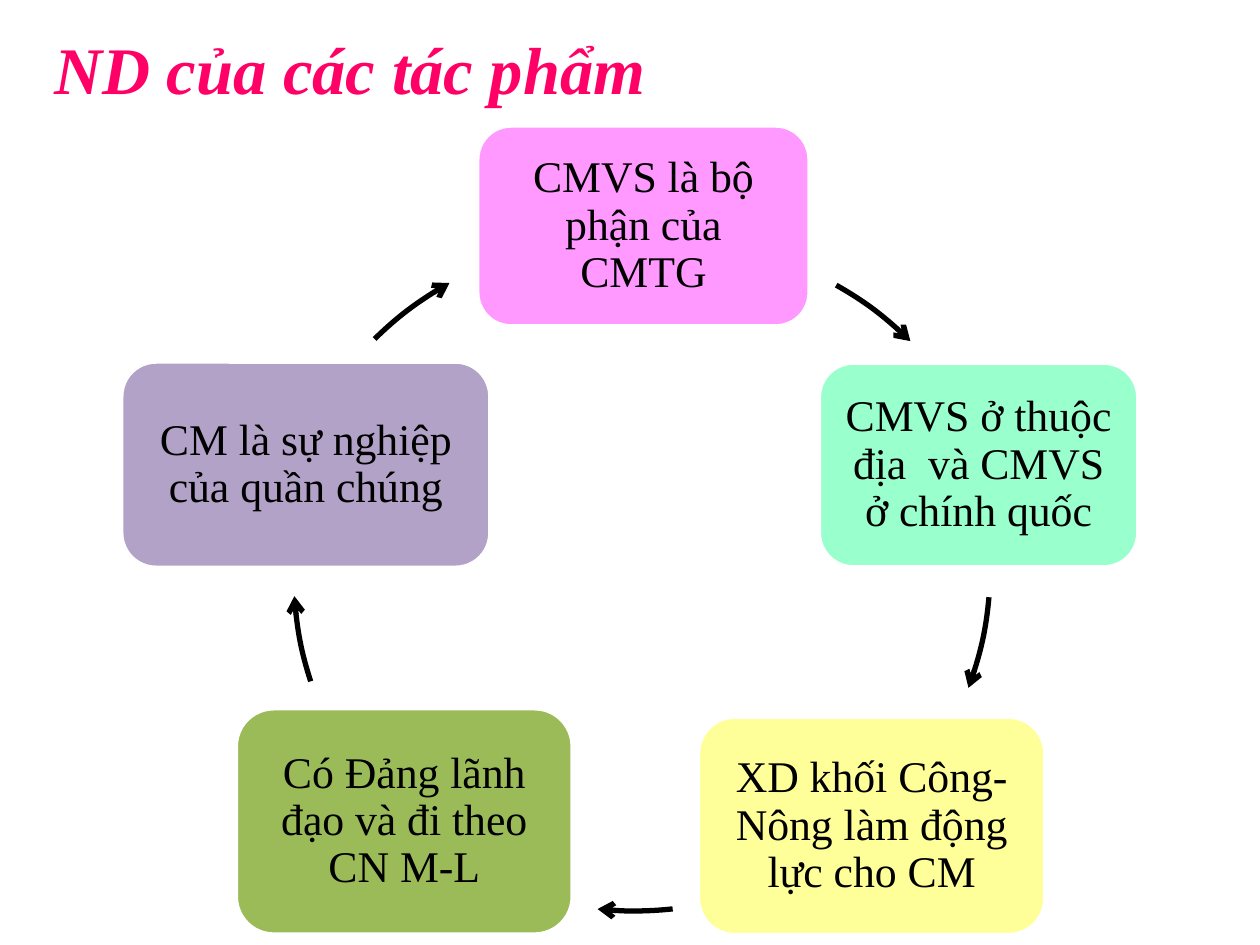
from typing import NamedTuple

from lxml import etree
from pptx import Presentation
from pptx.dml.color import RGBColor
from pptx.enum.shapes import MSO_SHAPE as Shape
from pptx.enum.text import MSO_ANCHOR as Anchor, PP_ALIGN as Align
from pptx.oxml import parse_xml
from pptx.oxml.ns import nsdecls, qn
from pptx.util import Pt

FONT = "Times New Roman"
BLACK = RGBColor(0x00, 0x00, 0x00)
WHITE = RGBColor(0xFF, 0xFF, 0xFF)
ROSE = RGBColor(0xFF, 0x00, 0x66)
PINK = RGBColor(0xFF, 0x99, 0xFF)
MINT = RGBColor(0x99, 0xFF, 0xCC)
YELLOW = RGBColor(0xFF, 0xFF, 0x99)
GREEN = RGBColor(0x9B, 0xBB, 0x59)
LILAC = RGBColor(0xB3, 0xA2, 0xC7)
RING = 404  # diameter of the circle the arrows follow


class Card(NamedTuple):
    text: str
    fill: RGBColor
    left: float
    top: float
    width: float
    height: float


class Arc(NamedTuple):
    left: float
    top: float
    start: float  # degrees, clockwise from east
    end: float


CARDS = [
    Card("CMVS là bộ phận của CMTG", PINK, 273, 72, 189.4, 114.3),
    Card("CMVS ở thuộc địa  và CMVS ở chính quốc", MINT, 468.2, 207.5, 182, 116.5),
    Card("XD khối Công-Nông làm động lực cho CM", YELLOW, 399.1, 409.8, 198, 124.3),
    Card("Có Đảng lãnh đạo và đi theo CN M-L", GREEN, 135, 405, 192, 128.8),
    Card("CM là sự nghiệp của quần chúng", LILAC, 69.6, 206.9, 210.4, 117.3),
]
ARCS = [
    Arc(176.4, 136.8, 299.5, 314.6),
    Arc(162, 121, 5.2, 20.3),
    Arc(160.6, 116.6, 83.8, 96),
    Arc(167.8, 125.3, 162.1, 176.2),
    Arc(153.4, 136.1, 225.6, 240.8),
]


def add_run(p, text: str, size: float, color: RGBColor):
    r = p.add_run()
    r.text = text
    r.font.size = Pt(size)
    r.font.color.rgb = color
    r.font.name = FONT
    return r


def add_title(s, text: str) -> None:
    tf = s.shapes.add_textbox(Pt(23.8), Pt(12.2), Pt(653.8), Pt(60)).text_frame
    tf.word_wrap = True
    p = tf.paragraphs[0]
    p.space_before = Pt(4)
    r = add_run(p, text, 38, ROSE)
    r.font.bold = r.font.italic = True
    # Soft text shadow, placed between the fill and the font
    shadow = parse_xml(
        f'<a:effectLst {nsdecls("a")}>'
        '<a:outerShdw blurRad="38100" dist="38100" dir="5400000">'
        '<a:srgbClr val="000000"><a:alpha val="43000"/></a:srgbClr>'
        '</a:outerShdw></a:effectLst>')
    r.font._element.find(qn("a:latin")).addprevious(shadow)


def add_card(s, card: Card) -> None:
    sp = s.shapes.add_shape(Shape.ROUNDED_RECTANGLE, Pt(card.left), Pt(card.top),
                            Pt(card.width), Pt(card.height))
    sp.shadow.inherit = False
    sp.fill.solid()
    sp.fill.fore_color.rgb = card.fill
    sp.line.color.rgb = WHITE
    sp.line.width = Pt(2)
    tf = sp.text_frame
    tf.word_wrap = True
    tf.vertical_anchor = Anchor.MIDDLE
    tf.margin_left = tf.margin_right = tf.margin_top = tf.margin_bottom = Pt(7.2)
    p = tf.paragraphs[0]
    p.alignment = Align.CENTER
    p.line_spacing = 0.9
    add_run(p, card.text, 25, BLACK)


def add_arc(s, arc: Arc) -> None:
    sp = s.shapes.add_shape(Shape.ARC, Pt(arc.left), Pt(arc.top), Pt(RING), Pt(RING))
    # Angles are stored in 60000ths of a degree, adjustments in 100000ths
    sp.adjustments[0] = arc.start * 0.6
    sp.adjustments[1] = arc.end * 0.6
    sp.shadow.inherit = False
    sp.fill.background()
    sp.line.color.rgb = BLACK
    sp.line.width = Pt(3)
    etree.SubElement(sp.line._get_or_add_ln(), qn("a:tailEnd"), type="arrow")


def main() -> None:
    prs = Presentation()
    prs.slide_width, prs.slide_height = Pt(720), Pt(540)
    s = prs.slides.add_slide(prs.slide_layouts[6])

    # Heading
    add_title(s, "ND của các tác phẩm")

    # Cycle of cards, each followed by its arrow
    for card, arc in zip(CARDS, ARCS):
        add_card(s, card)
        add_arc(s, arc)

    prs.save("out.pptx")


if __name__ == "__main__":
    main()
